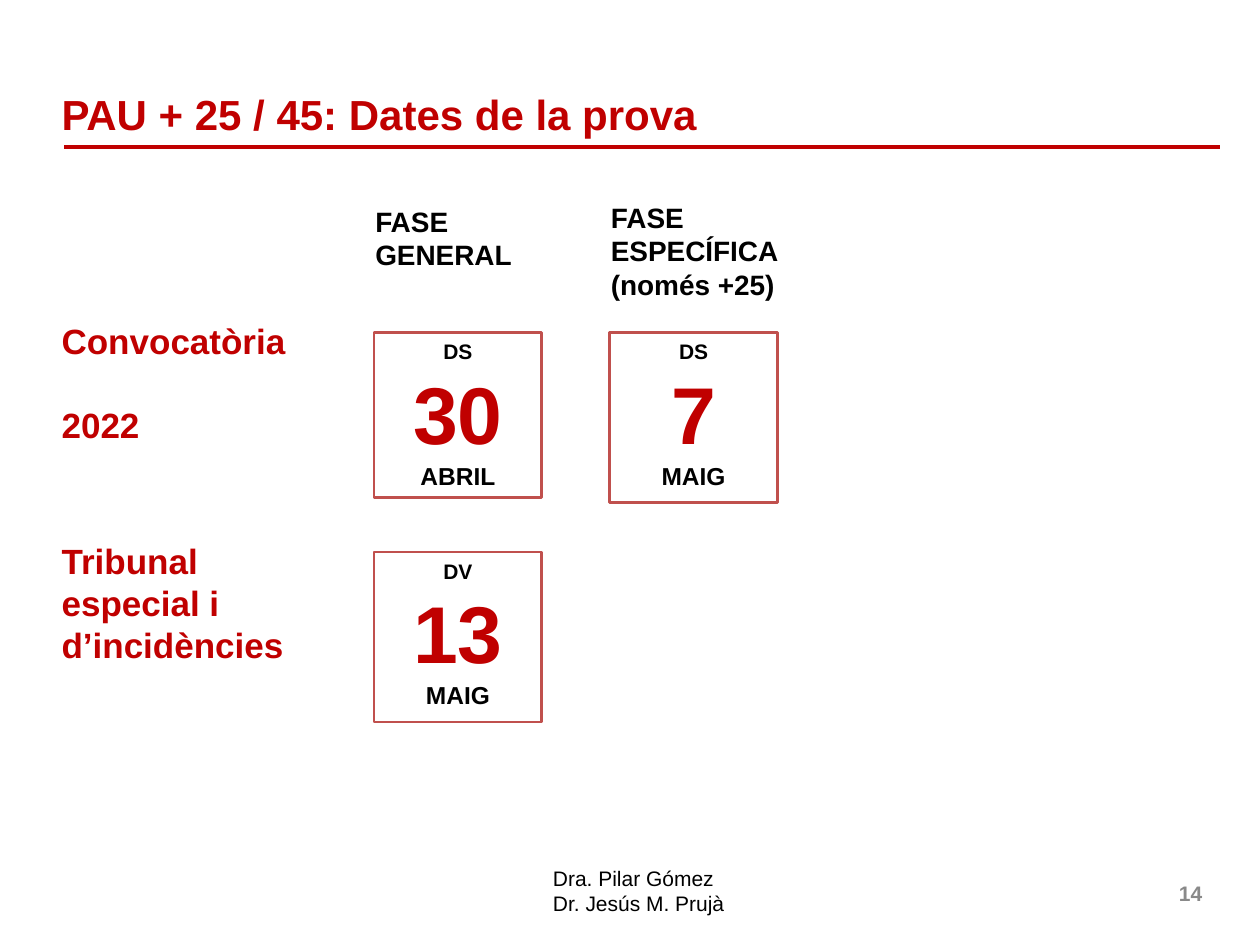
import dataclasses

import pptx
import pptx.dml.color
import pptx.enum.shapes
import pptx.enum.text
import pptx.oxml.ns
import pptx.util
from lxml import etree

ALIGN = pptx.enum.text.PP_ALIGN
ANCHOR = pptx.enum.text.MSO_ANCHOR
COLS, ROWS = 100, 75


@dataclasses.dataclass(frozen=True)
class Theme:
    """Colours, type sizes and line widths of the slide."""
    font: str = "Arial"
    red: str = "C00000"
    edge: str = "C0504D"
    black: str = "000000"
    gray: str = "898989"
    title: int = 24
    row: int = 20
    head: int = 16
    day: int = 46
    month: int = 14
    small: int = 12
    rule: float = 2.25
    frame: float = 1.5


LOOK = Theme()


def rgb(code):
    """Turn a hex code into a colour."""
    return pptx.dml.color.RGBColor.from_string(code)


def place(deck, box):
    """Turn a box in columns and rows into slide lengths."""
    wide, high = deck.slide_width / COLS, deck.slide_height / ROWS
    return [round(n * unit) for n, unit in zip(box, (wide, high) * 2)]


def write(frame, lines, align=ALIGN.LEFT, anchor=ANCHOR.TOP):
    """Fill a frame with lines of text, size, colour and weight."""
    frame.word_wrap = True
    frame.vertical_anchor = anchor
    for i, (text, size, color, bold) in enumerate(lines):
        para = frame.add_paragraph() if i else frame.paragraphs[0]
        para.text = text
        para.alignment = align
        font = para.font
        font.name, font.size, font.bold = LOOK.font, pptx.util.Pt(size), bold
        font.color.rgb = rgb(color)


def label(deck, slide, box, texts, size, color, bold=True, **setup):
    """Add a text box whose lines share one style."""
    frame = slide.shapes.add_textbox(*place(deck, box)).text_frame
    write(frame, [(text, size, color, bold) for text in texts], **setup)
    return frame


def header(deck, slide, box, text):
    """Place the title and the rule along its foot."""
    x, y, w, h = box
    label(deck, slide, box, [text], LOOK.title, LOOK.red, anchor=ANCHOR.MIDDLE)
    left, top, wide, _ = place(deck, (x + 1.2, y + h - 0.1, w - 2, 0))
    line = slide.shapes.add_connector(
        pptx.enum.shapes.MSO_CONNECTOR.STRAIGHT, left, top, left + wide, top)
    line.line.color.rgb = rgb(LOOK.red)
    line.line.width = pptx.util.Pt(LOOK.rule)
    props = line._element.spPr
    etree.SubElement(props, pptx.oxml.ns.qn("a:effectLst"))


def card(deck, slide, box, week, day, month):
    """Draw a calendar card for one date."""
    shape = slide.shapes.add_shape(
        pptx.enum.shapes.MSO_SHAPE.RECTANGLE, *place(deck, box))
    shape.shadow.inherit = False
    shape.fill.background()
    shape.line.color.rgb = rgb(LOOK.edge)
    shape.line.width = pptx.util.Pt(LOOK.frame)
    write(shape.text_frame, [
        (week, LOOK.small, LOOK.black, True),
        (day, LOOK.day, LOOK.red, True),
        (month, LOOK.month, LOOK.black, True),
    ], align=ALIGN.CENTER)


def dates(deck, slide, box):
    """Lay out phases as columns and sittings as rows."""
    x, y, w, h = box
    first, step, drop = x + 25.8, 18.7, 17.4
    tops = [y + 11, y + 11 + drop]
    heads = [(["FASE", "GENERAL"], 0.3, 14.2),
             (["FASE", "ESPECÍFICA", "(només +25)"], 0, 16.5)]
    for i, (texts, dip, wide) in enumerate(heads):
        spot = (first - 0.9 + i * step, y + dip, wide, 8.5)
        label(deck, slide, spot, texts, LOOK.head, LOOK.black)
    names = [["Convocatòria", "2022"], ["Tribunal especial i d’incidències"]]
    for top, texts in zip(tops, names):
        frame = label(deck, slide, (x, top - 1.5, 20.5, 13.4), texts,
                      LOOK.row, LOOK.red)
        for para in frame.paragraphs[1:]:
            para.space_before = pptx.util.Pt(LOOK.row * 1.2)
    days = [(0, 0, 13.1, "DS", "30", "ABRIL"),
            (1, 0, 13.5, "DS", "7", "MAIG"),
            (0, 1, 13.5, "DV", "13", "MAIG")]
    for col, row, high, *date in days:
        card(deck, slide, (first + col * step, tops[row], 13.3, high), *date)


def footer(deck, slide, box):
    """Place the authors and the page number."""
    x, y, w, h = box
    label(deck, slide, (x, y, 15.7, h), ["Dra. Pilar Gómez", "Dr. Jesús M. Prujà"],
          LOOK.small, LOOK.black, bold=False)
    label(deck, slide, (x + w - 4.7, y + 0.7, 4.7, 4), ["14"], LOOK.small,
          LOOK.gray, align=ALIGN.RIGHT, anchor=ANCHOR.MIDDLE)


def main():
    """Build and save the slide."""
    deck = pptx.Presentation()
    deck.slide_width = pptx.util.Inches(10)
    deck.slide_height = pptx.util.Inches(7.5)
    slide = deck.slides.add_slide(deck.slide_layouts[6])
    header(deck, slide, (3.9, 6.3, 93.7, 5.5), "PAU + 25 / 45: Dates de la prova")
    dates(deck, slide, (3.9, 15.4, 60.2, 41.9))
    footer(deck, slide, (42.9, 68.2, 53.5, 5.1))
    deck.save("out.pptx")


if __name__ == "__main__":
    main()
